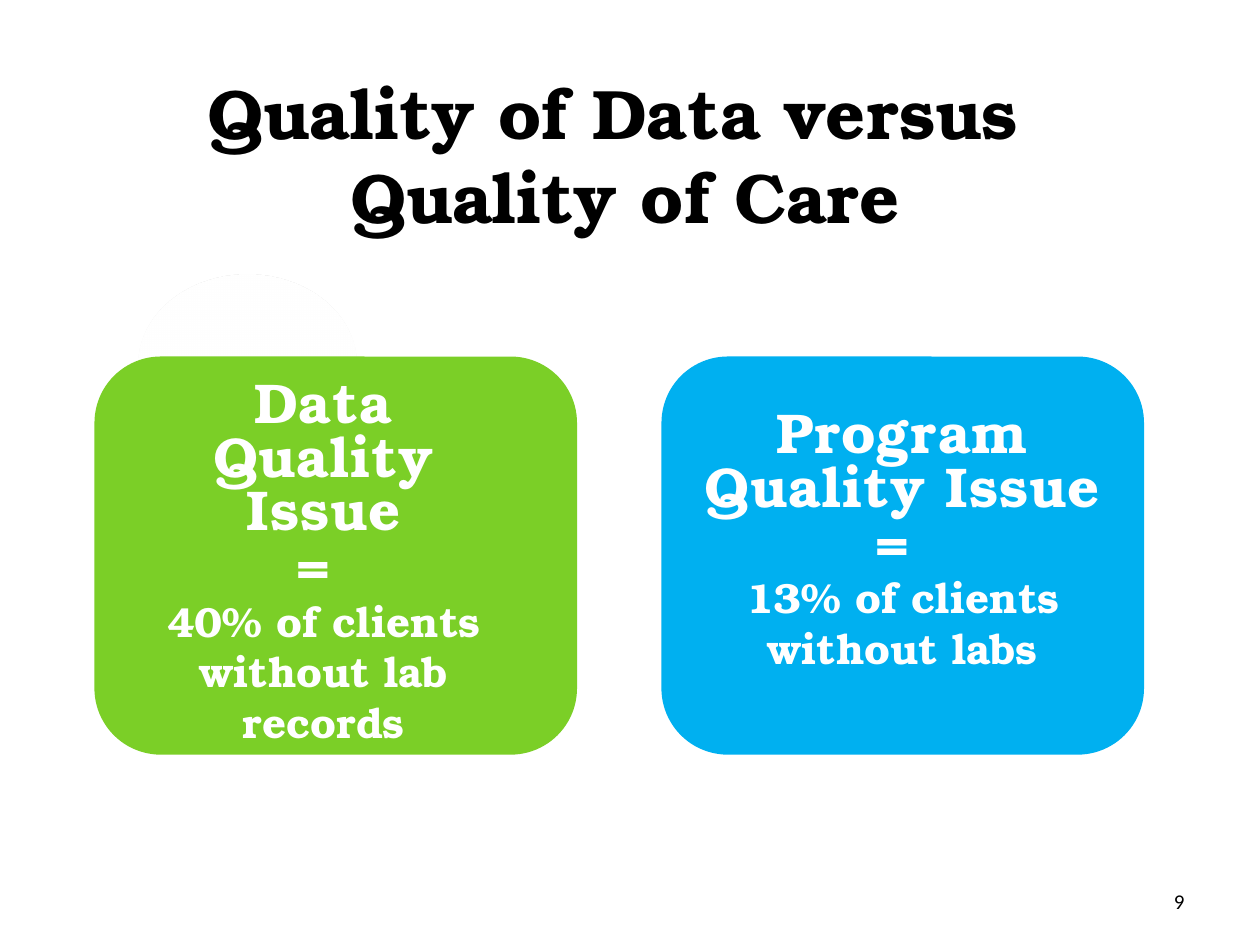
from lxml import etree
from pptx import Presentation
from pptx import util as u
from pptx.dml.color import RGBColor
from pptx.enum import shapes, text
from pptx.oxml.ns import qn

PX = 9144
WHITE = RGBColor(0xFF, 0xFF, 0xFF)
BLACK = RGBColor(0, 0, 0)
GREEN = RGBColor(0x7B, 0xCF, 0x27)
BLUE = RGBColor(0, 0xB0, 0xF0)
SERIF, SANS = "TeX Gyre Bonum", "Calibri"

TITLE = ["Quality of Data versus ", "Quality of Care"]
PAGE = "9"
CARDS = [
    (GREEN, ["Data Quality Issue", "= ", "40% of clients without lab records"],
     (117, 297, 280, 304)),
    (BLUE, ["Program Quality Issue", "= ", "13% of clients without labs"],
     (525, 321, 383, 220)),
]
CARD_X, CARD_Y, CARD_W, CARD_H, CARD_STEP = 75, 283, 383, 316, 450
GLOW = [(63, 7), (72, 15), (91, 28)]

HEADING = dict(size=u.Pt(40), name=SERIF, bold=True)
LABEL = dict(size=u.Pt(32), name=SERIF, bold=True)
DETAIL = dict(size=u.Pt(24), name=SERIF, bold=True)
NUMBER = dict(size=u.Pt(12), name=SANS)


def box(*px):
    return [v * PX for v in px]


def write(sp, lines, color, align, anchor=text.MSO_ANCHOR.TOP):
    tf = sp.text_frame
    tf.word_wrap = True
    tf.auto_size = text.MSO_AUTO_SIZE.NONE
    tf.vertical_anchor = anchor
    for i, (line, fmt, spacing, tracking) in enumerate(lines):
        p = tf.add_paragraph() if i else tf.paragraphs[0]
        p.alignment = align
        p.line_spacing = spacing
        p.space_before = u.Pt(0)
        r = p.add_run()
        r.text = line
        for key, value in fmt.items():
            setattr(r.font, key, value)
        r.font.color.rgb = color
        if tracking:
            r.font._element.set("spc", str(tracking))


def add_plain(s, kind, place):
    sp = s.shapes.add_shape(kind, *box(*place))
    sp.shadow.inherit = False
    sp.line.fill.background()
    return sp


def add_glow(s):
    sp = add_plain(s, shapes.MSO_SHAPE.OVAL, (110, 218, 173, 142))
    sp.fill.gradient()
    sp.fill.gradient_angle = 90
    stops = sp._element.spPr.find(qn("a:gradFill")).find(qn("a:gsLst"))
    for old in list(stops):
        stops.remove(old)
    for pos, alpha in GLOW:
        gs = etree.SubElement(stops, qn("a:gs"), pos=str(pos * 1000))
        clr = etree.SubElement(gs, qn("a:srgbClr"), val=str(WHITE))
        etree.SubElement(clr, qn("a:alpha"), val=str(alpha * 1000))


def main():
    prs = Presentation()
    prs.slide_width, prs.slide_height = box(1000, 750)
    s = prs.slides.add_slide(prs.slide_layouts[5])
    center = text.PP_ALIGN.CENTER

    title = s.shapes.title
    title.left, title.top, title.width, title.height = box(17, 50, 958, 145)
    write(title, [(t, HEADING, 1.0, 0) for t in TITLE], BLACK, center)

    add_glow(s)

    number = s.shapes.add_textbox(*box(717, 695, 233, 40))
    write(number, [(PAGE, NUMBER, 1.0, 0)], BLACK, text.PP_ALIGN.RIGHT,
          text.MSO_ANCHOR.MIDDLE)

    for i, (color, (label, sign, detail), place) in enumerate(CARDS):
        card = add_plain(s, shapes.MSO_SHAPE.FLOWCHART_ALTERNATE_PROCESS,
                         (CARD_X + i * CARD_STEP, CARD_Y, CARD_W, CARD_H))
        card.fill.solid()
        card.fill.fore_color.rgb = color
        lines = [(label, LABEL, 0.8, 60), (sign, LABEL, 0.8, 60),
                 (detail, DETAIL, 1.0, 0)]
        write(s.shapes.add_textbox(*box(*place)), lines, WHITE, center)

    prs.save("out.pptx")


if __name__ == "__main__":
    main()
